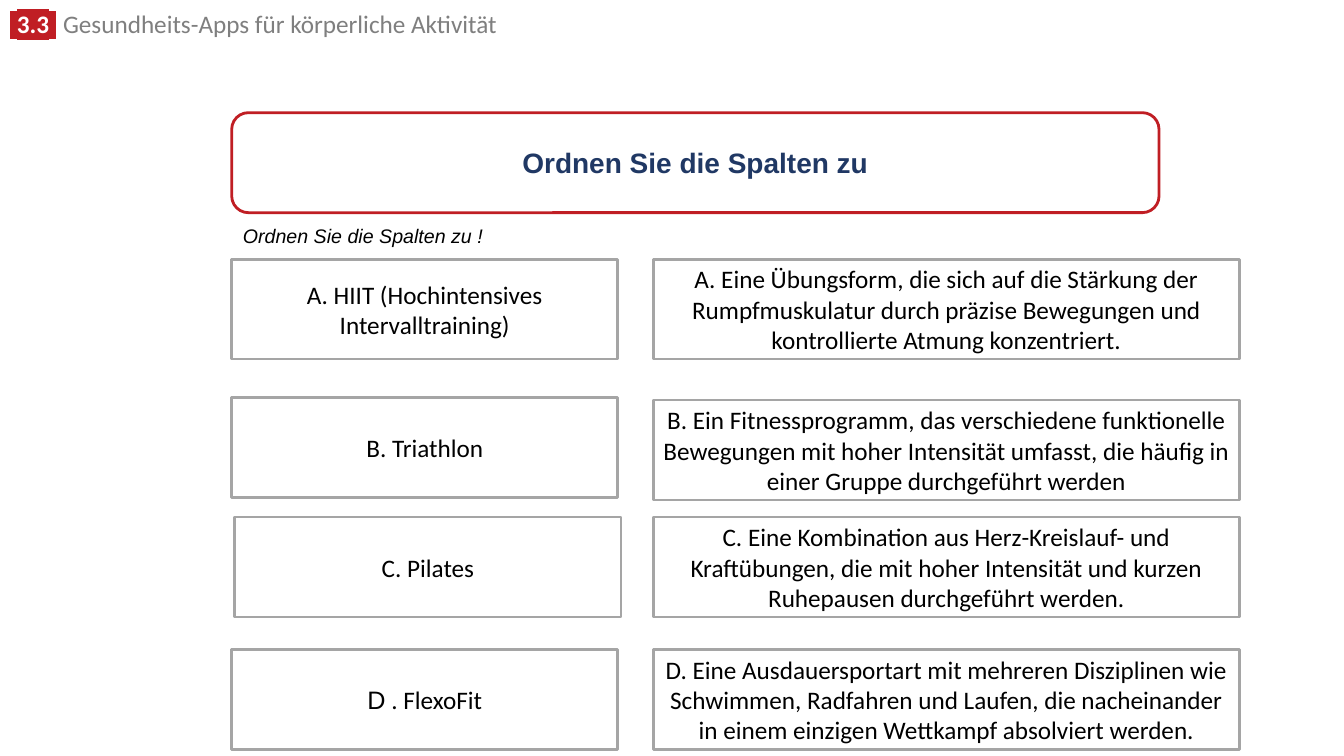
from pptx import Presentation
from pptx.dml.color import RGBColor
from pptx.enum.shapes import MSO_SHAPE
from pptx.enum.text import MSO_ANCHOR, MSO_AUTO_SIZE, PP_ALIGN
from pptx.oxml import parse_xml
from pptx.oxml.ns import nsdecls, qn
from pptx.util import Cm, Pt

COLORS = {
    "red": "C01E24",
    "navy": "203864",
    "gray": "7F7F7F",
    "edge": "A5A5A5",
    "white": "FFFFFF",
    "black": "000000",
}


def rgb(name):
    return RGBColor.from_string(COLORS[name])


class Sheet:
    """Holds the text style and the current slide."""

    def __init__(self, slide, face="Calibri", size=18):
        self.slide = slide
        self.face = face
        self.size = size

    def style(self, run, face=None, size=None, color="black", bold=False, italic=False):
        font = run.font
        font.name = face or self.face
        font.size = Pt(size or self.size)
        font.bold = bold
        font.italic = italic
        font.color.rgb = rgb(color)

    def mark(self, run, color):
        """Put a highlight behind a run that already has its colour."""
        glow = parse_xml(
            f'<a:highlight {nsdecls("a")}><a:srgbClr val="{COLORS[color]}"/></a:highlight>'
        )
        run.font._element.find(qn("a:solidFill")).addnext(glow)

    def label(self, left, top, width, height, wrap=True):
        frame = self.slide.shapes.add_textbox(
            Cm(left), Cm(top), Cm(width), Cm(height)
        ).text_frame
        frame.word_wrap = wrap
        frame.auto_size = MSO_AUTO_SIZE.SHAPE_TO_FIT_TEXT
        return frame.paragraphs[0]

    def box(self, left, top, width, text, kind=MSO_SHAPE.RECTANGLE, edge="edge", **look):
        shape = self.slide.shapes.add_shape(kind, Cm(left), Cm(top), Cm(width), Cm(2.52))
        shape.shadow.inherit = False
        shape.fill.solid()
        shape.fill.fore_color.rgb = rgb("white")
        shape.line.color.rgb = rgb(edge)
        shape.line.width = Pt(2)
        frame = shape.text_frame
        frame.word_wrap = True
        frame.vertical_anchor = MSO_ANCHOR.MIDDLE
        para = frame.paragraphs[0]
        para.text = text
        para.alignment = PP_ALIGN.CENTER
        self.style(para.runs[0], **look)
        return para

    def header(self, number, title):
        para = self.label(0, 0.23, 24.18, 0.89)
        para.line_spacing = 0.8
        for text, face in ((" ", "Arial"), (number, "Calibri"), (" ", "Arial")):
            run = para.add_run()
            run.text = text
            self.style(run, face, color="white", bold=True)
            self.mark(run, "red")
        for text, face in ((" ", "Arial"), (title, "Calibri")):
            run = para.add_run()
            run.text = text
            self.style(run, face, color="gray")

    def hint(self, text):
        para = self.label(5.87, 5.51, 6.6, 0.86, wrap=False)
        para.text = text
        self.style(para.runs[0], "Arial", 14, italic=True)


TERMS = [
    (5.84, 6.53, "A. HIIT (Hochintensives Intervalltraining)"),
    (5.84, 10.01, "B. Triathlon"),
    (5.92, 13.03, "C. Pilates"),
]
MEANINGS = [
    (6.53, "A. Eine Übungsform, die sich auf die Stärkung der Rumpfmuskulatur durch "
           "präzise Bewegungen und kontrollierte Atmung konzentriert."),
    (10.08, "B. Ein Fitnessprogramm, das verschiedene funktionelle Bewegungen mit hoher "
            "Intensität umfasst, die häufig in einer Gruppe durchgeführt werden"),
    (13.03, "C. Eine Kombination aus Herz-Kreislauf- und Kraftübungen, die mit hoher "
            "Intensität und kurzen Ruhepausen durchgeführt werden."),
    (16.36, "D. Eine Ausdauersportart mit mehreren Disziplinen wie Schwimmen, Radfahren "
            "und Laufen, die nacheinander in einem einzigen Wettkampf absolviert werden."),
]


def main():
    deck = Presentation()
    deck.slide_width, deck.slide_height = Cm(33.87), Cm(19.05)
    sheet = Sheet(deck.slides.add_slide(deck.slide_layouts[6]))

    sheet.header("3.3", "Gesundheits-Apps für körperliche Aktivität")
    sheet.box(5.84, 2.84, 23.37, "Ordnen Sie die Spalten zu", MSO_SHAPE.ROUNDED_RECTANGLE,
              "red", face="Arial", size=20, color="navy", bold=True)
    sheet.hint("Ordnen Sie die Spalten zu !")

    for left, top, text in TERMS:
        sheet.box(left, top, 9.73, text)
    for top, text in MEANINGS:
        sheet.box(16.46, top, 14.78, text)
    last = sheet.box(5.84, 16.36, 9.73, "D", face="Arial")
    run = last.add_run()
    run.text = " . FlexoFit"
    sheet.style(run)

    deck.save("out.pptx")


if __name__ == "__main__":
    main()
